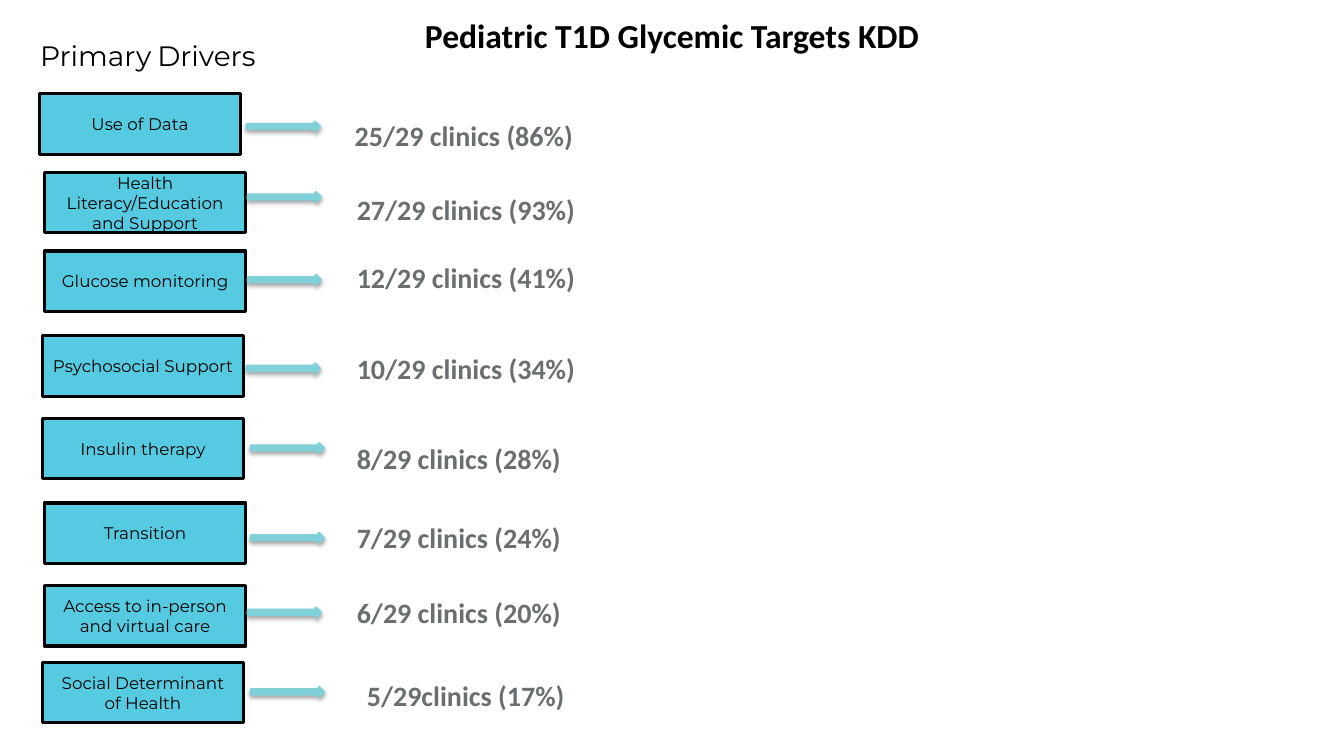
from lxml import etree
from pptx import Presentation
from pptx import util as u
from pptx.dml.color import RGBColor
from pptx.enum import shapes, text
from pptx.oxml.ns import qn

TITLE = "Pediatric T1D Glycemic Targets KDD"
HEADING = [("Primary", "heading"), (" ", "heading_gap"), ("Drivers", "heading")]
# driver, clinics, then (left, top) of box, arrow and clinic count, in points
DRIVERS = [
    ("Use of Data", "25/29 clinics (86%)", (28.1, 67), (176.4, 87.1), (249.8, 81.4)),
    ("Health Literacy/Education and Support", "27/29 clinics (93%)",
     (31.7, 123.1), (177.1, 137.5), (251.3, 133.9)),
    ("Glucose monitoring", "12/29 clinics (41%)",
     (31.7, 179.3), (177.1, 196.6), (251.3, 182.9)),
    ("Psychosocial Support", "10/29 clinics (34%)",
     (30.2, 239.8), (176.4, 259.9), (251.3, 247.7)),
    ("Insulin therapy", "8/29 clinics (28%)",
     (30.2, 298.8), (179.3, 316.8), (251.3, 311.8)),
    ("Transition", "7/29 clinics (24%)",
     (31.7, 359.3), (179.3, 380.9), (251.3, 368.6)),
    ("Access to in-person and virtual care", "6/29 clinics (20%)",
     (31.7, 418.3), (177.1, 434.2), (251.3, 421.9)),
    ("Social Determinant of Health", "5/29clinics (17%)",
     (30.2, 473), (179.3, 491), (258.5, 481)),
]
BOX, ARROW, COUNT = (144, 43.2), (51.8, 6.5), (666.7, 31.7)
COUNT_INSET = 3.6

THEME = {
    "colors": {"box": "56CAE1", "border": "000000", "arrow": "7FD0D9"},
    "fonts": {  # name, size, bold, colour
        "title": ("Calibri", 24, True, "000000"),
        "heading": ("Montserrat", 20, False, "000000"),
        "heading_gap": ("Montserrat", 16, False, "000000"),
        "driver": ("Montserrat", 12, False, "000000"),
        "count": ("Calibri", 20, True, "696F70"),
    },
}


def write(tf, runs, align=text.PP_ALIGN.LEFT, **frame):
    """Fill the first paragraph with (text, font style) runs."""
    frame = {"word_wrap": True, "auto_size": text.MSO_AUTO_SIZE.NONE, **frame}
    for name, value in frame.items():
        setattr(tf, name, value)
    p = tf.paragraphs[0]
    p.alignment = align
    for words, style in runs:
        r = p.add_run()
        r.text = words
        face, size, bold, color = THEME["fonts"][style]
        for name, value in {"name": face, "size": u.Pt(size), "bold": bold}.items():
            setattr(r.font, name, value)
        r.font.color.rgb = RGBColor.from_string(color)
    return p


def add_shape(s, kind, at, size, fill, line, width):
    sp = s.shapes.add_shape(kind, *map(u.Pt, at + size))
    sp.shadow.inherit = False
    sp.fill.solid()
    sp.fill.fore_color.rgb = RGBColor.from_string(THEME["colors"][fill])
    sp.line.color.rgb = RGBColor.from_string(THEME["colors"][line])
    sp.line.width = u.Pt(width)
    return sp


def add_soft_shadow(sp):
    effects = sp._element.spPr.find(qn("a:effectLst"))
    shadow = etree.SubElement(effects, qn("a:outerShdw"), blurRad=str(u.Pt(3)),
                              dist=str(u.Pt(1.8)), dir="5400000", rotWithShape="0")
    color = etree.SubElement(shadow, qn("a:srgbClr"), val="000000")
    etree.SubElement(color, qn("a:alpha"), val="35000")


def add_text(s, at, size, runs, **frame):
    tb = s.shapes.add_textbox(*map(u.Pt, at + size))
    write(tb.text_frame, runs, **frame)


def main():
    prs = Presentation()
    prs.slide_width, prs.slide_height = u.Pt(960), u.Pt(540)
    s = prs.slides.add_slide(prs.slide_layouts[5])

    title = s.shapes.title
    for name, value in {"left": 48, "top": 11.5, "width": 864, "height": 31}.items():
        setattr(title, name, u.Pt(value))
    p = write(title.text_frame, [(TITLE, "title")], text.PP_ALIGN.CENTER,
              vertical_anchor=text.MSO_ANCHOR.MIDDLE)
    p.line_spacing = 0.9

    add_text(s, (21.6, 23.8), (205.9, 31.7), HEADING)

    inset = u.Pt(COUNT_INSET)
    margins = {f"margin_{side}": inset for side in ("left", "top", "right", "bottom")}
    for driver, count, box_at, arrow_at, count_at in DRIVERS:
        box = add_shape(s, shapes.MSO_SHAPE.RECTANGLE, box_at, BOX, "box", "border", 2.25)
        write(box.text_frame, [(driver, "driver")], text.PP_ALIGN.CENTER,
              vertical_anchor=text.MSO_ANCHOR.MIDDLE)
        arrow = add_shape(s, shapes.MSO_SHAPE.RIGHT_ARROW, arrow_at, ARROW,
                          "arrow", "arrow", 2)
        add_soft_shadow(arrow)
        add_text(s, count_at, COUNT, [(count, "count")], **margins)

    prs.save("out.pptx")


if __name__ == "__main__":
    main()
